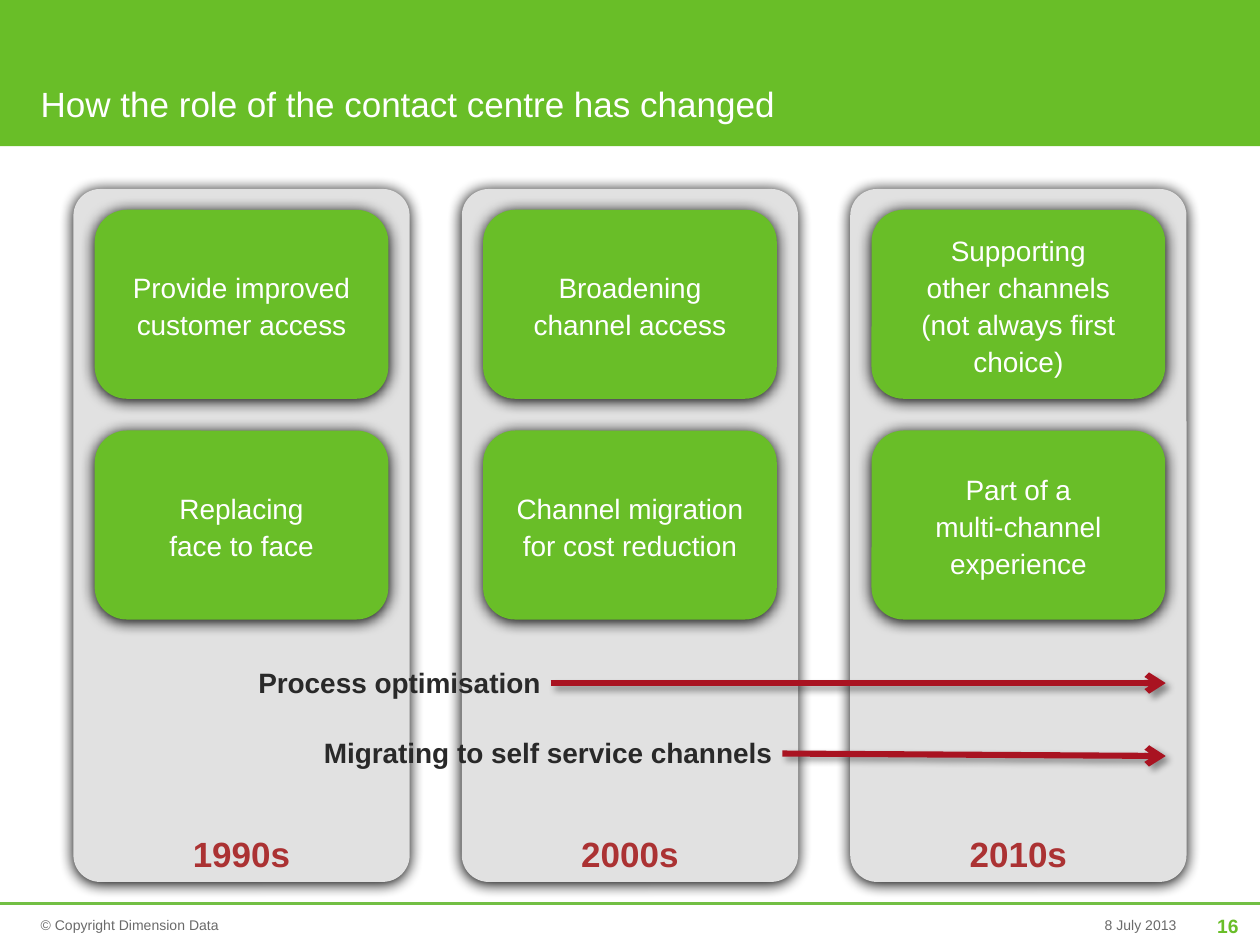
from copy import deepcopy
from lxml import etree
from pptx import Presentation
from pptx import util as u
from pptx.dml.color import RGBColor
from pptx.enum import shapes, text
from pptx.oxml.ns import qn

GREEN = RGBColor(0x69, 0xBE, 0x28)
RULE = RGBColor(0x72, 0xBF, 0x44)
GREY = RGBColor(0xE1, 0xE1, 0xE1)
RED = RGBColor(0xAB, 0x32, 0x33)
ARROW = RGBColor(0xA9, 0x13, 0x21)
DARK = RGBColor(0x29, 0x29, 0x29)
FOOT = RGBColor(0x6A, 0x6A, 0x6A)
WHITE = RGBColor(0xFF, 0xFF, 0xFF)
LEFT, MID, RIGHT = text.PP_ALIGN.LEFT, text.PP_ALIGN.CENTER, text.PP_ALIGN.RIGHT
MIDDLE, BOTTOM = text.MSO_ANCHOR.MIDDLE, text.MSO_ANCHOR.BOTTOM


def write(shape, words, size, color, bold=False, align=LEFT, anchor=MIDDLE,
          space=1.1, after=0, inset=0, wrap=True):
    frame = shape.text_frame
    frame.word_wrap = wrap
    frame.vertical_anchor = anchor
    frame.margin_left = frame.margin_top = frame.margin_bottom = 0
    frame.margin_right = u.Cm(inset)
    para = frame.paragraphs[0]
    para.text = words
    para.alignment = align
    para.line_spacing = space
    para.space_before, para.space_after = u.Pt(0), u.Pt(after)
    for run in para.runs:
        font = run.font
        font.name, font.size, font.bold = "Arial", u.Pt(size), bold
        font.color.rgb = color
    # Line breaks take the size of the text around them
    for br in para._p.findall(qn("a:br")):
        br.insert(0, deepcopy(para.runs[0]._r.rPr))


def shade(shape, alpha=None, blur=0, dist=0, angle=0):
    props = shape._element.spPr
    effects = etree.SubElement(props, qn("a:effectLst"))
    if alpha:
        cast = etree.SubElement(
            effects, qn("a:outerShdw"), blurRad=str(u.Pt(blur)),
            dist=str(u.Pt(dist)), dir=str(angle * 60000), algn="ctr", rotWithShape="0")
        tone = etree.SubElement(cast, qn("a:srgbClr"), val="000000")
        etree.SubElement(tone, qn("a:alpha"), val=str(alpha * 1000))


deck = Presentation()
deck.slide_width, deck.slide_height = u.Cm(25.4), u.Cm(19.05)
slide = deck.slides.add_slide(deck.slide_layouts[5])
items = slide.shapes

# Header band, behind the title
title = items.title
band = items.add_shape(shapes.MSO_SHAPE.RECTANGLE, 0, 0, deck.slide_width, u.Cm(2.95))
band.fill.solid()
band.fill.fore_color.rgb = GREEN
band.line.fill.background()
band.shadow.inherit = False
title._element.addprevious(band._element)

# Title
title.left, title.top = u.Cm(0.82), u.Cm(0.2)
title.width, title.height = u.Cm(17.8), u.Cm(2.31)
write(title, "How the role of the contact centre has changed", 20, WHITE,
      anchor=BOTTOM, space=1.2, after=2)

# Footer
rule = items.add_connector(shapes.MSO_CONNECTOR.STRAIGHT, 0, u.Cm(18.21),
                           deck.slide_width, u.Cm(18.21))
rule.line.color.rgb = RULE
rule.line.width = u.Pt(1.5)
shade(rule)
for words, x, w, size, color, bold, align in (
    ("© Copyright Dimension Data", 0.82, 11.88, 8, FOOT, False, LEFT),
    ("8 July 2013", 19.05, 4.67, 8, FOOT, False, RIGHT),
    ("16", 23.93, 1.04, 11, GREEN, True, RIGHT),
):
    box = items.add_textbox(u.Cm(x), u.Cm(18.21), u.Cm(w), u.Cm(0.85))
    write(box, words, size, color, bold=bold, align=align)

# Decade columns, each with two cards
decades = (
    ("1990s", "Provide improved customer access", "Replacing\nface to face"),
    ("2000s", "Broadening\nchannel access", "Channel migration\nfor cost reduction"),
    ("2010s", "Supporting\nother channels\n(not always first choice)",
     "Part of a\nmulti-channel experience"),
)
for col, (decade, *cards) in enumerate(decades):
    x = 1.48 + col * 7.83
    parts = [(decade, x, 3.81, 6.78, 13.97, 0.08, GREY, 20, RED, True, BOTTOM)]
    for row, words in enumerate(cards):
        parts.append((words, x + 0.43, 4.23 + row * 4.45, 5.92, 3.81, 0.17,
                      GREEN, 16, WHITE, False, MIDDLE))
    for words, left, top, w, h, curve, fill, size, color, bold, anchor in parts:
        panel = items.add_shape(shapes.MSO_SHAPE.ROUNDED_RECTANGLE,
                                u.Cm(left), u.Cm(top), u.Cm(w), u.Cm(h))
        panel.adjustments[0] = curve
        panel.fill.solid()
        panel.fill.fore_color.rgb = fill
        panel.line.fill.background()
        shade(panel, alpha=100, blur=8.5, dist=1, angle=90)
        write(panel, words, size, color, bold=bold, align=MID, anchor=anchor, after=3)

# Trends running across the decades
for words, x, y, w, start, end in (
    ("Process optimisation", 2.97, 13.41, 8.13, 13.77, 13.77),
    ("Migrating to self service channels", 2.79, 14.83, 12.98, 15.19, 15.24),
):
    box = items.add_textbox(u.Cm(x), u.Cm(y), u.Cm(w), u.Cm(0.69))
    write(box, words, 16, DARK, bold=True, align=RIGHT, space=1, inset=0.2)
    arrow = items.add_connector(shapes.MSO_CONNECTOR.STRAIGHT, u.Cm(x + w), u.Cm(start),
                                u.Cm(23.5), u.Cm(end))
    arrow.line.color.rgb = ARROW
    arrow.line.width = u.Pt(3.5)
    etree.SubElement(arrow.line._get_or_add_ln(), qn("a:tailEnd"), type="arrow")
    shade(arrow, alpha=40, blur=4, dist=3, angle=45)

deck.save("out.pptx")
